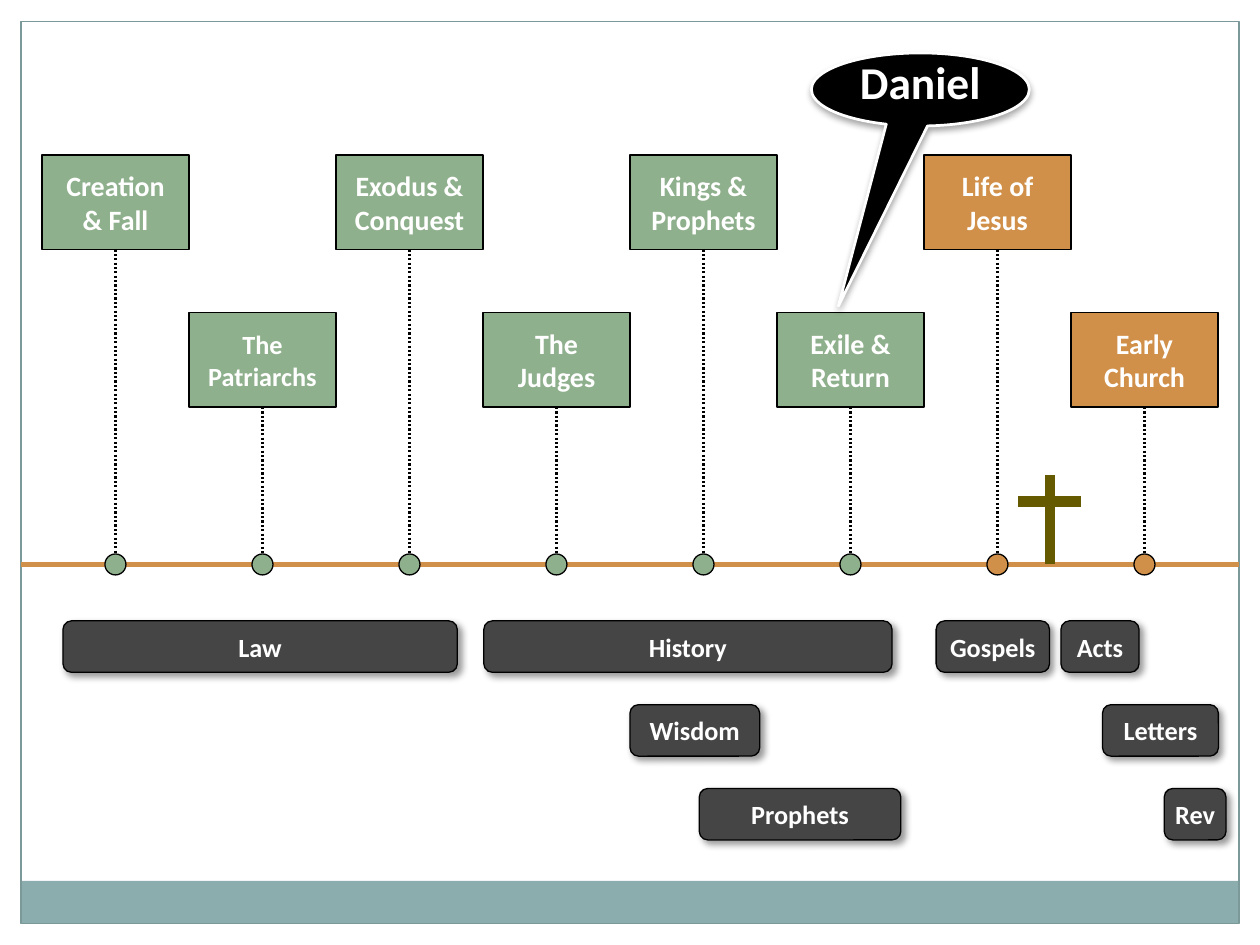
from lxml.etree import SubElement
from pptx import Presentation
from pptx.dml.color import RGBColor
from pptx.enum.dml import MSO_LINE
from pptx.enum.shapes import MSO_CONNECTOR, MSO_SHAPE
from pptx.enum.text import MSO_ANCHOR, PP_ALIGN
from pptx.oxml.ns import qn
from pptx.util import Inches, Pt

SAGE, ORANGE, TEAL, OLIVE = "8FB08C", "D19049", "8CADAE", "665A00"
BLACK, WHITE, CHARCOAL = "000000", "FFFFFF", "454545"

prs = Presentation()
prs.slide_width, prs.slide_height = Inches(10), Inches(7.5)
slide = prs.slides.add_slide(prs.slide_layouts[6])
ACROSS, DOWN = prs.slide_width / 100, prs.slide_height / 100  # one percent


def add_block(preset, x, y, w, h, text="", fill=None, line=None, weight=0.75,
              size=16, wrap=True, leading=None, before=0, shadow=None):
    """Place a shape by percent of the slide; shadow is (opacity, blur, distance, angle)."""
    block = slide.shapes.add_shape(preset, round(x * ACROSS), round(y * DOWN),
                                   round(w * ACROSS), round(h * DOWN))
    if fill:
        block.fill.solid()
        block.fill.fore_color.rgb = RGBColor.from_string(fill)
    else:
        block.fill.background()
    if line:
        block.line.color.rgb = RGBColor.from_string(line)
        block.line.width = Pt(weight)
    else:
        block.line.fill.background()
    block.shadow.inherit = False
    if shadow:
        opacity, blur, distance, angle = shadow
        effects = block._element.spPr.find(qn("a:effectLst"))
        outer = SubElement(effects, qn("a:outerShdw"), blurRad=str(Pt(blur)),
                           dist=str(Pt(distance)), dir=str(angle * 60000),
                           algn="ctr", rotWithShape="0")
        shade = SubElement(outer, qn("a:srgbClr"), val=BLACK)
        SubElement(shade, qn("a:alpha"), val=str(opacity * 1000))
    if text:
        frame = block.text_frame
        frame.word_wrap = wrap
        frame.vertical_anchor = MSO_ANCHOR.MIDDLE
        frame.text = text
        for paragraph in frame.paragraphs:
            paragraph.alignment = PP_ALIGN.CENTER
            paragraph.space_before = Pt(before)
            if leading:
                paragraph.line_spacing = Pt(leading)
            font = paragraph.runs[0].font
            font.name, font.size, font.bold = "Calibri", Pt(size), True
            font.color.rgb = RGBColor.from_string(WHITE)
    return block


def add_rule(x1, y1, x2, y2, color, weight, dash=None):
    """Draw a straight line between two points given in percent of the slide."""
    rule = slide.shapes.add_connector(
        MSO_CONNECTOR.STRAIGHT, round(x1 * ACROSS), round(y1 * DOWN),
        round(x2 * ACROSS), round(y2 * DOWN))
    rule.line.color.rgb = RGBColor.from_string(color)
    rule.line.width = Pt(weight)
    if dash:
        rule.line.dash_style = dash
    SubElement(rule._element.spPr, qn("a:effectLst"))
    return rule


# Frame, footer band and time axis
EDGE = 1.67
AXIS = 59.73
add_block(MSO_SHAPE.RECTANGLE, EDGE, 93.2, 100 - 2 * EDGE, 4.53, fill=TEAL)
add_block(MSO_SHAPE.RECTANGLE, EDGE, 2.27, 100 - 2 * EDGE, 95.46, line="7C999A")
add_rule(EDGE, AXIS, 100 - EDGE, AXIS, ORANGE, 3)

# Eras: eight columns, alternating between an upper and a lower row
eras = [("Creation & Fall", SAGE), ("The Patriarchs", SAGE),
        ("Exodus & Conquest", SAGE), ("The\nJudges", SAGE),
        ("Kings & Prophets", SAGE), ("Exile & Return", SAGE),
        ("Life of Jesus", ORANGE), ("Early Church", ORANGE)]
MARGIN = 100 / 30
COLUMN = (100 - 2 * MARGIN) / len(eras)
ERA_ROWS = (16.4, 33.07)
DOT_W, DOT_H = 1.67, 2.22
for column, (era, color) in enumerate(eras):
    left, top = MARGIN + column * COLUMN, ERA_ROWS[column % 2]
    middle = left + COLUMN / 2
    box = add_block(MSO_SHAPE.RECTANGLE, left, top, COLUMN, 10, era, fill=color,
                    line=BLACK, weight=0.9, size=15 if "Patriarchs" in era else 16)
    dot = add_block(MSO_SHAPE.OVAL, middle - DOT_W / 2, AXIS - DOT_H / 2,
                    DOT_W, DOT_H, fill=color, line=BLACK)
    stem = add_rule(middle, top + 10, middle, AXIS - DOT_H / 2, BLACK, 1.25,
                    MSO_LINE.ROUND_DOT)
    stem.begin_connect(box, 2)
    stem.end_connect(dot, 0)

# Cross
CROSS = 83.33
add_rule(CROSS, 50.27, CROSS, AXIS, OLIVE, 6)
add_rule(CROSS - 2.5, 53.07, CROSS + 2.5, 53.07, OLIVE, 6)

# Callout pointing at the exile
daniel = add_block(MSO_SHAPE.OVAL_CALLOUT, 64.4, 5.6, 17.3, 7.73, "Daniel",
                   fill=BLACK, line=WHITE, weight=1.57, size=26, leading=22,
                   before=12, shadow=(35, 4, 2, 90))
daniel.adjustments[0], daniel.adjustments[1] = -0.376, 2.964

# Books of the Bible: name, row, left, width
books = [("Law", 0, 5, 31.3), ("History", 0, 38.4, 32.4), ("Wisdom", 1, 50, 10.3),
         ("Prophets", 2, 55.5, 16), ("Gospels", 0, 74.3, 9), ("Acts", 0, 84.2, 6.2),
         ("Letters", 1, 87.5, 9.2), ("Rev", 2, 92.4, 4.9)]
for book, row, left, width in books:
    add_block(MSO_SHAPE.ROUNDED_RECTANGLE, left, 65.7 + row * 8.87, width, 5.45, book,
              fill=CHARCOAL, line=BLACK, size=15, wrap=False, shadow=(40, 4, 3, 45))

prs.save("out.pptx")
